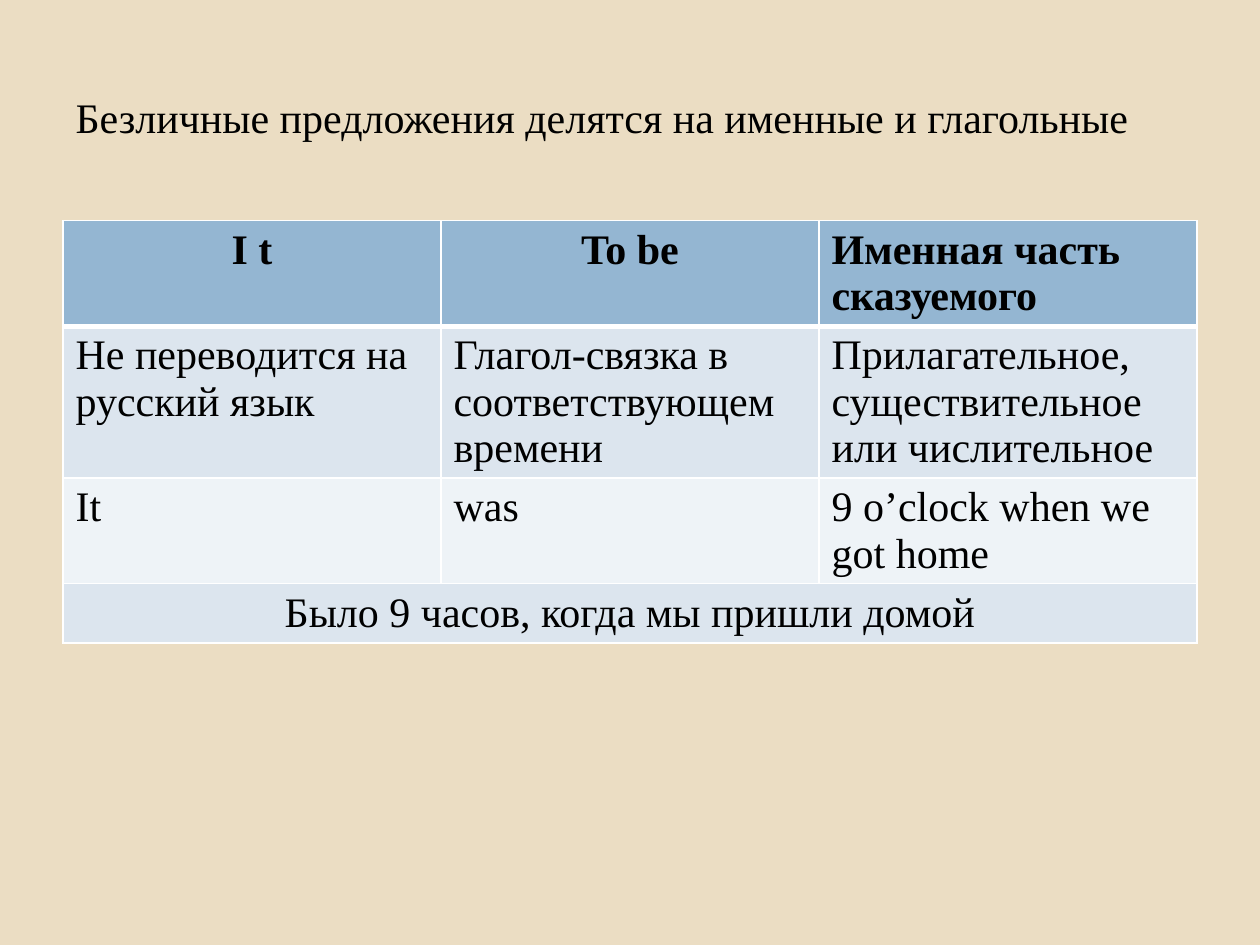
from lxml.etree import SubElement
from pptx import Presentation
from pptx.dml.color import RGBColor as Color
from pptx.enum.text import MSO_ANCHOR as Anchor, PP_ALIGN as Align
from pptx.oxml.ns import qn
from pptx.util import Cm, Pt

LEFT, WIDTH = 1.27, 22.86
ROW_HEIGHT = 1.04
HEADER_FILL = "94B6D2"
BAND_FILLS = ("DCE5EE", "EEF3F7")
FONT = {"name": "Times New Roman", "size": Pt(24), "bold": False}
ROWS = [
    ["I t", "To be", "Именная часть сказуемого"],
    [
        "Не переводится на русский язык",
        "Глагол-связка в соответствующем времени",
        "Прилагательное, существительное или числительное",
    ],
    ["It", "was", "9 o’clock when we got home"],
    ["Было 9 часов, когда мы пришли домой"],
]
CENTRED = {(0, 0), (0, 1), (3, 0)}


def paint(fill, value):
    fill.solid()
    fill.fore_color.rgb = Color.from_string(value)


def write(frame, text, align=Align.LEFT, **changes):
    para = frame.paragraphs[0]
    para.alignment = align
    span = para.add_run()
    span.text = text
    for name, value in {**FONT, **changes}.items():
        setattr(span.font, name, value)
    paint(span.font.fill, "000000")


def add_borders(cell, widths):
    properties = cell._tc.get_or_add_tcPr()
    for side, width in widths.items():
        line = SubElement(properties, qn(f"a:ln{side}"), w=str(Pt(width)))
        fill = SubElement(line, qn("a:solidFill"))
        SubElement(fill, qn("a:srgbClr"), val="FFFFFF")


def add_title(page, text):
    title = page.shapes.title
    box = {"left": Cm(LEFT), "top": Cm(0.76), "width": Cm(WIDTH), "height": Cm(3.18)}
    for name, value in box.items():
        setattr(title, name, value)
    title.text_frame.vertical_anchor = Anchor.MIDDLE
    write(title.text_frame, text)


def add_grid(page):
    row_count, column_count = len(ROWS), len(ROWS[0])
    table = page.shapes.add_table(
        row_count, column_count,
        Cm(LEFT), Cm(4.45), Cm(WIDTH), Cm(ROW_HEIGHT * row_count),
    ).table
    for row in range(row_count):
        header = row == 0
        color = HEADER_FILL if header else BAND_FILLS[(row - 1) % 2]
        widths = {"L": 1, "R": 1, "T": 3 if row == 1 else 1, "B": 3 if header else 1}
        for column in range(column_count):
            cell = table.cell(row, column)
            add_borders(cell, widths)
            paint(cell.fill, color)
        for column, text in enumerate(ROWS[row]):
            align = Align.CENTER if (row, column) in CENTRED else Align.LEFT
            write(table.cell(row, column).text_frame, text, align, bold=header)
    table.cell(row_count - 1, 0).merge(table.cell(row_count - 1, column_count - 1))


def main():
    deck = Presentation()
    deck.slide_width, deck.slide_height = Cm(25.4), Cm(19.05)
    page = deck.slides.add_slide(deck.slide_layouts[5])
    paint(page.background.fill, "EBDDC3")
    add_title(page, "Безличные предложения делятся на именные и глагольные")
    add_grid(page)
    deck.save("out.pptx")


if __name__ == "__main__":
    main()
